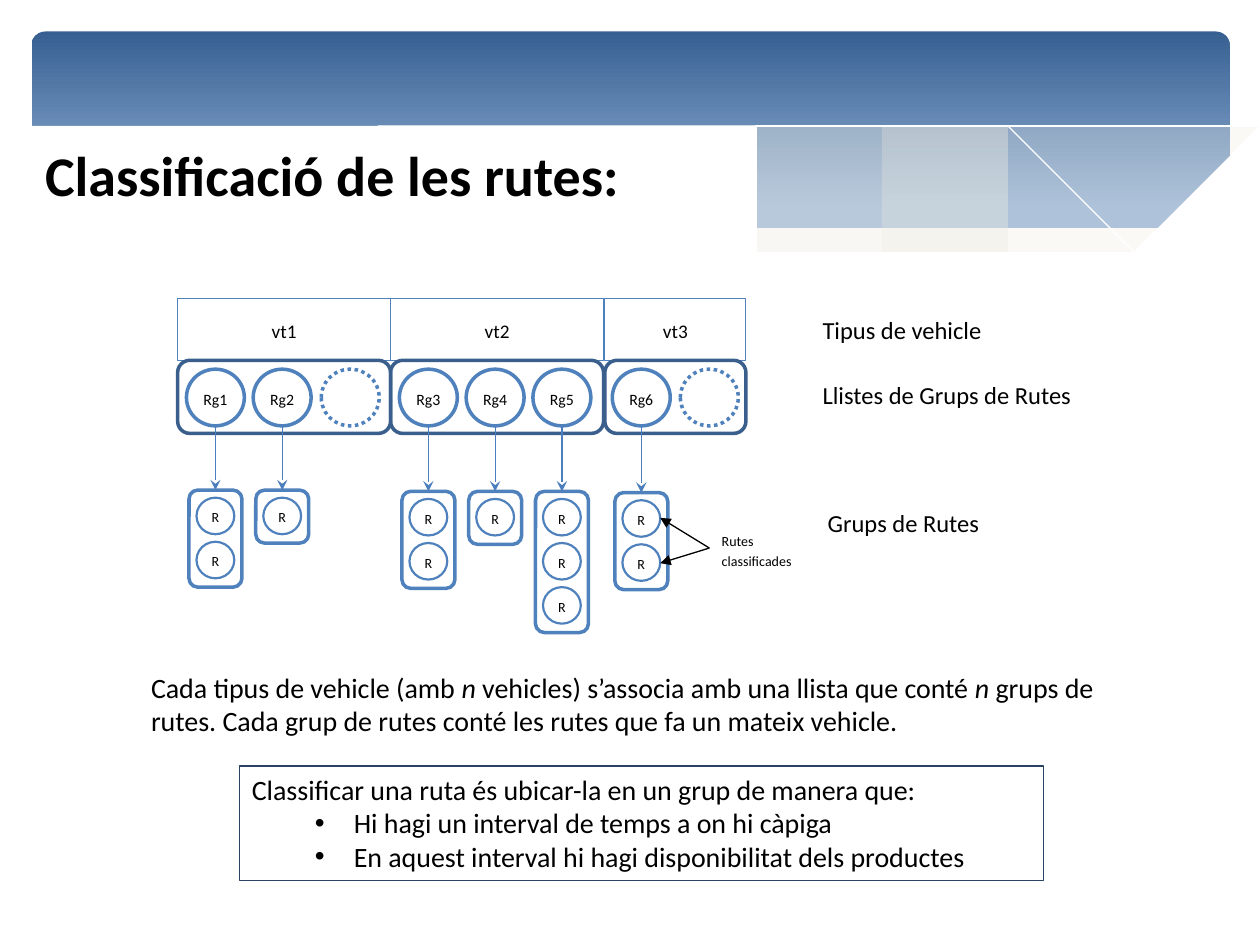
from lxml import etree
from pptx import Presentation
from pptx.dml import color
from pptx.enum import dml, shapes, text
from pptx.oxml import ns
from pptx.util import Inches, Pt

BLUE, BLACK, WHITE, CREAM = "4F81BD", "000000", "FFFFFF", "EEECE1"
OVAL, RECT = shapes.MSO_SHAPE.OVAL, shapes.MSO_SHAPE.RECTANGLE
ROUND = shapes.MSO_SHAPE.FLOWCHART_ALTERNATE_PROCESS
LEFT, CENTER = text.PP_ALIGN.LEFT, text.PP_ALIGN.CENTER


def rgb(hex_color):
    return color.RGBColor.from_string(hex_color)


def box(kind, x, y, w, h, label="", size=8, fill=WHITE, line=BLUE, width=2.0,
        align=CENTER):
    sp = s.shapes.add_shape(kind, Inches(x), Inches(y), Inches(w), Inches(h))
    sp.shadow.inherit = False
    if fill:
        sp.fill.solid()
        sp.fill.fore_color.rgb = rgb(fill)
    else:
        sp.fill.background()
    if line:
        sp.line.color.rgb = rgb(line)
        sp.line.width = Pt(width)
    else:
        sp.line.fill.background()
    if label:
        tf = sp.text_frame
        tf.word_wrap = True
        tf.vertical_anchor = (text.MSO_ANCHOR.MIDDLE if align == CENTER
                              else text.MSO_ANCHOR.TOP)
        if kind == OVAL:
            tf.margin_left = tf.margin_right = tf.margin_top = tf.margin_bottom = 0
        tf.text = label
        p = tf.paragraphs[0]
        p.alignment, p.line_spacing, p.space_after = align, 1.15, Pt(10)
        for r in p.runs:
            r.font.name, r.font.size = "Calibri", Pt(size)
            r.font.color.rgb = rgb(BLACK)
    return sp


prs = Presentation()
prs.slide_width, prs.slide_height = Inches(10), Inches(7.5)
s = prs.slides.add_slide(prs.slide_layouts[6])

# Header band with gradient
sp = box(shapes.MSO_SHAPE.ROUNDED_RECTANGLE, 0.25, 0.25, 9.51, 1.56, line=None)
sp.adjustments[0] = 0.07
sp.fill.gradient()
sp.fill.gradient_angle = 270
for stop, c, pos in zip(sp.fill.gradient_stops, ("376092", "95B3D7"), (0, 0.9)):
    stop.color.rgb, stop.position = rgb(c), pos

# Waves: fill, opacity in percent, curves given by the points they pass through
waves = [
    (CREAM, 29, [[(9.76, 0.94), (8.61, 1.18), (7.53, 1.43), (6.61, 1.6)],
                 [(6.61, 1.6), (7.45, 1.69), (8.24, 1.72), (9.05, 1.63), (9.76, 1.41)]]),
    (CREAM, 40, [[(8.93, 1.67), (7.75, 1.49), (6.29, 1.16), (5.02, 0.9), (3.8, 0.8),
                  (2.86, 0.86)],
                 [(2.86, 0.86), (4.49, 1.16), (6.01, 1.5), (7.36, 1.69), (8.18, 1.73),
                  (8.93, 1.67)]]),
    (None, 0, [[(3.09, 0.9), (3.87, 0.82), (5.1, 0.86), (6.95, 1.14), (9.07, 1.66)]]),
    (None, 0, [[(6.13, 1.51), (7.48, 1.17), (8.66, 0.93), (9.75, 0.8)]]),
    (WHITE, 100, [[(9.77, 1.41), (8.99, 1.64), (8.09, 1.71), (6.48, 1.56), (4.47, 1.14),
                   (3.16, 0.88), (1.93, 0.78), (0.95, 0.85), (0.23, 1.07)],
                  [(0.23, 2.24), (9.77, 2.24)]]),
]
STEPS = 10
for fill, opacity, curves in waves:
    points = []
    for knots in curves:
        # Catmull-Rom spline through the knots
        ends = [knots[0]] + knots + [knots[-1]]
        for quad in zip(ends, ends[1:], ends[2:], ends[3:]):
            for t in (i / STEPS for i in range(STEPS)):
                points.append([b + t * (c - a) / 2
                               + t ** 2 * (2 * a - 5 * b + 4 * c - d) / 2
                               + t ** 3 * (3 * b - a - 3 * c + d) / 2
                               for a, b, c, d in zip(*quad)])
        points.append(knots[-1])
    fb = s.shapes.build_freeform(*points[0], scale=Inches(1))
    fb.add_line_segments(points[1:], close=fill is not None)
    sp = fb.convert_to_shape()
    sp.shadow.inherit = False
    if fill:
        sp.fill.solid()
        sp.fill.fore_color.rgb = rgb(fill)
        sp.line.fill.background()
        clr = sp._element.spPr.find(".//" + ns.qn("a:srgbClr"))
        etree.SubElement(clr, ns.qn("a:alpha"), val=str(opacity * 1000))
    else:
        sp.fill.background()
        sp.line.color.rgb = rgb(WHITE)
        sp.line.width = 0

# Title
tf = s.shapes.add_textbox(Inches(0.26), Inches(1.07), Inches(5.04), Inches(0.64)).text_frame
tf.word_wrap = False
tf.text = "Classificació de les rutes:"
f = tf.paragraphs[0].runs[0].font
f.name, f.size, f.bold = "Calibri", Pt(32), True
f.color.rgb = rgb(BLACK)

# Vehicle types and their lists
for name, x, w in (("vt1", 1.41, 1.69), ("vt2", 3.1, 1.69), ("vt3", 4.8, 1.12)):
    box(RECT, x, 2.37, w, 0.49, name, 11, width=0.5)
    box(ROUND, x, 2.86, w, 0.58, fill=None, line="3A5F8C")

# Route groups: centre, top of the group box, number of routes
arrows = []
groups = ((1.71, 3.89, 2), (2.24, 3.89, 1), (3.4, 3.9, 2),
          (3.93, 3.9, 1), (4.46, 3.9, 3), (5.09, 3.91, 2))
for n, (cx, top, count) in enumerate(groups, 1):
    box(OVAL, cx - 0.23, 2.93, 0.46, 0.45, f"Rg{n}", 9)
    box(ROUND, cx - 0.21, top, 0.42, 0.07 + 0.35 * count)
    for i in range(count):
        box(OVAL, cx - 0.15, top + 0.06 + 0.35 * i, 0.3, 0.29, "R", width=1.25)
    arrows.append((cx, 3.38, cx, top, "4B7EBC", "stealth"))

# Empty places in the lists
for x in (2.55, 5.4):
    box(OVAL, x, 2.93, 0.46, 0.45).line.dash_style = dml.MSO_LINE.ROUND_DOT

# Side labels
for label, x, y, w, size in (("Tipus de vehicle", 6.43, 2.42, 2.03, 14),
                             ("Llistes de Grups de Rutes", 6.43, 2.93, 2.25, 14),
                             ("Grups de Rutes", 6.47, 3.95, 1.94, 14),
                             ("Rutes\vclassificades", 5.63, 4.16, 0.87, 8)):
    box(RECT, x, y, w, 0.36, label, size, line=None, align=LEFT)

# Arrows
arrows += [(5.63, 4.35, 5.24, y, BLACK, "triangle") for y in (4.11, 4.47)]
for x1, y1, x2, y2, c, head in arrows:
    cn = s.shapes.add_connector(shapes.MSO_CONNECTOR.STRAIGHT, Inches(x1), Inches(y1),
                                Inches(x2), Inches(y2))
    cn.line.color.rgb = rgb(c)
    cn.line.width = Pt(0.75)
    ln = cn._element.spPr.find(ns.qn("a:ln"))
    etree.SubElement(ln, ns.qn("a:tailEnd"), type=head)
    etree.SubElement(cn._element.spPr, ns.qn("a:effectLst"))

# Explanation
tf = s.shapes.add_textbox(Inches(1.1), Inches(5.27), Inches(8.05), Inches(0.64)).text_frame
tf.word_wrap = True
for i, part in enumerate((
        "Cada tipus de vehicle (amb ", "n", " vehicles) s’associa amb una llista que conté ",
        "n", " grups de rutes. Cada grup de rutes conté les rutes que fa un mateix vehicle.")):
    r = tf.paragraphs[0].add_run()
    r.text = part
    r.font.name, r.font.size, r.font.italic = "Calibri", Pt(16), i % 2 == 1
    r.font.color.rgb = rgb(BLACK)

# Classification rules
tf = box(RECT, 1.9, 6.08, 6.38, 0.91, fill=None, line="294363", width=0.75).text_frame
tf.word_wrap = True
tf.vertical_anchor = text.MSO_ANCHOR.TOP
tf.text = ("Classificar una ruta és ubicar-la en un grup de manera que:\n"
           "Hi hagi un interval de temps a on hi càpiga\n"
           "En aquest interval hi hagi disponibilitat dels productes")
for i, p in enumerate(tf.paragraphs):
    p.alignment = LEFT
    f = p.runs[0].font
    f.name, f.size = "Calibri", Pt(16)
    f.color.rgb = rgb(BLACK)
    if i:
        p.level = 1
        pPr = p._p.get_or_add_pPr()
        pPr.set("marL", str(Inches(0.81)))
        pPr.set("indent", str(Inches(-0.31)))
        etree.SubElement(pPr, ns.qn("a:buFont"), typeface="Arial")
        etree.SubElement(pPr, ns.qn("a:buChar"), char="•")

prs.save("out.pptx")
